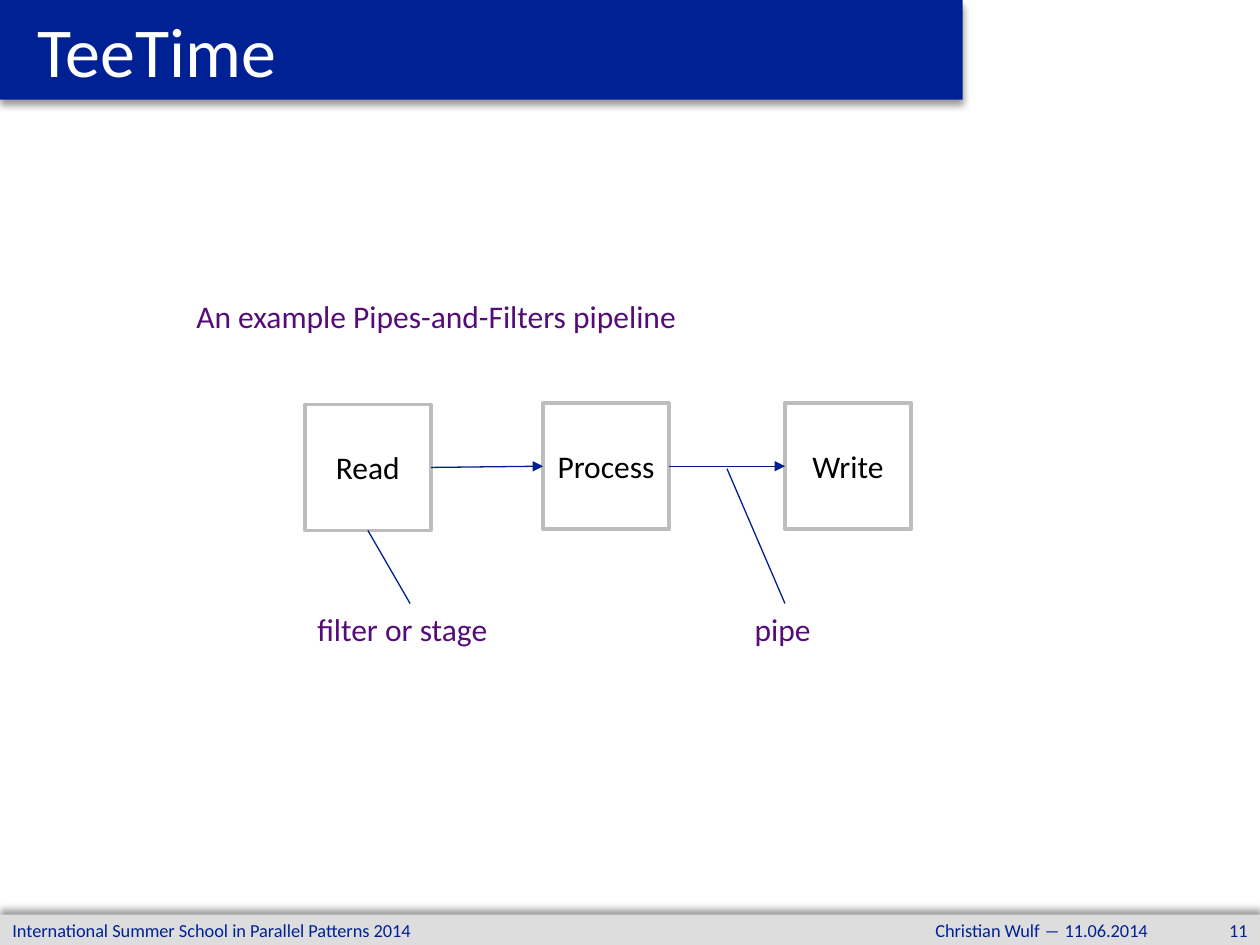
import dataclasses

import lxml.etree
import pptx
import pptx.dml.color
import pptx.enum.shapes
import pptx.enum.text
import pptx.oxml
import pptx.oxml.ns
import pptx.util

Inches = pptx.util.Inches
Pt = pptx.util.Pt
Align = pptx.enum.text.PP_ALIGN
Anchor = pptx.enum.text.MSO_ANCHOR
qn = pptx.oxml.ns.qn


@dataclasses.dataclass(frozen=True)
class Theme:
    font: str = "Calibri"
    title_size: float = 40
    body_size: float = 18
    footer_size: float = 10.5
    navy: str = "002193"
    arrow: str = "002090"
    purple: str = "550C78"
    footer_gray: str = "DDDDDD"
    border_gray: str = "BDBDBD"
    white: str = "FFFFFF"
    black: str = "000000"


THEME = Theme()


def rgb(value):
    return pptx.dml.color.RGBColor.from_string(value)


def write_text(shape, text, size, color, align=Align.LEFT,
               anchor=Anchor.MIDDLE, wrap=True, side_inset=0.1):
    frame = shape.text_frame
    frame.word_wrap = wrap
    frame.auto_size = pptx.enum.text.MSO_AUTO_SIZE.NONE
    frame.vertical_anchor = anchor
    frame.margin_left = frame.margin_right = Inches(side_inset)
    frame.margin_top = frame.margin_bottom = Inches(0.05)
    paragraph = frame.paragraphs[0]
    paragraph.alignment = align
    run = paragraph.add_run()
    run.text = text
    run.font.name = THEME.font
    run.font.size = Pt(size)
    run.font.color.rgb = rgb(color)


def add_rectangle(slide, left, top, width, height, fill):
    shape = slide.shapes.add_shape(
        pptx.enum.shapes.MSO_SHAPE.RECTANGLE,
        Inches(left), Inches(top), Inches(width), Inches(height))
    shape.shadow.inherit = False
    shape.fill.solid()
    shape.fill.fore_color.rgb = rgb(fill)
    shape.line.fill.background()
    return shape


def add_bar(slide, left, top, width, height, fill, shadow_angle):
    bar = add_rectangle(slide, left, top, width, height, fill)
    effects = bar.element.spPr.find(qn("a:effectLst"))
    shadow = lxml.etree.SubElement(
        effects, qn("a:outerShdw"), blurRad=str(Pt(4)), dist=str(Pt(3)),
        dir=str(shadow_angle * 60000), rotWithShape="0")
    color = lxml.etree.SubElement(shadow, qn("a:srgbClr"), val=THEME.black)
    lxml.etree.SubElement(color, qn("a:alpha"), val="40000")


def add_title(slide, text, width, height):
    title = slide.shapes.title
    title.left, title.top = Inches(0), Inches(0)
    title.width, title.height = Inches(width), Inches(height)
    write_text(title, text, THEME.title_size, THEME.white,
               wrap=False, side_inset=0.3)
    slide.shapes.element.append(title.element)


def add_stage(slide, text, left, top):
    stage = add_rectangle(slide, left, top, 1, 1, THEME.white)
    stage.line.color.rgb = rgb(THEME.border_gray)
    stage.line.width = Pt(2)
    write_text(stage, text, THEME.body_size, THEME.black, Align.CENTER)
    return stage


def add_text_box(slide, left, top, width, height):
    return slide.shapes.add_textbox(
        Inches(left), Inches(top), Inches(width), Inches(height))


def add_label(slide, text, left, top, width):
    label = add_text_box(slide, left, top, width, 0.4)
    write_text(label, text, THEME.body_size, THEME.purple, anchor=Anchor.TOP)
    return label


def add_footer(slide, text, left, width, align, wrap=False):
    footer = add_text_box(slide, left, 7.28, width, 0.2)
    write_text(footer, text, THEME.footer_size, THEME.navy, align, wrap=wrap)


def add_line(slide, start, start_site, end=None, end_site=None,
             end_point=(0, 0), arrow=False):
    x, y = end_point
    line = slide.shapes.add_connector(
        pptx.enum.shapes.MSO_CONNECTOR.STRAIGHT,
        Inches(0), Inches(0), Inches(x), Inches(y))
    line.begin_connect(start, start_site)
    if end is not None:
        line.end_connect(end, end_site)
    line.line.color.rgb = rgb(THEME.arrow)
    line.line.width = Pt(0.75)
    if arrow:
        lxml.etree.SubElement(
            line.line._get_or_add_ln(), qn("a:tailEnd"), type="triangle")
    lxml.etree.SubElement(line.element.spPr, qn("a:effectLst"))


def main():
    presentation = pptx.Presentation()
    presentation.slide_width = Inches(10)
    presentation.slide_height = Inches(7.5)
    slide = presentation.slides.add_slide(presentation.slide_layouts[5])

    add_bar(slide, 0, 0, 7.64, 0.79, THEME.navy, 90)
    add_bar(slide, 0, 7.26, 10, 0.24, THEME.footer_gray, 270)
    add_title(slide, "TeeTime", 7.64, 0.79)

    read = add_stage(slide, "Read", 2.42, 3.21)
    process = add_stage(slide, "Process", 4.31, 3.2)
    write = add_stage(slide, "Write", 6.23, 3.2)
    for source, target in ((read, process), (process, write)):
        add_line(slide, source, 3, target, 1, arrow=True)

    add_label(slide, "An example Pipes-and-Filters pipeline", 1.46, 2.31, 4.09)
    stage_label = add_label(slide, "filter or stage", 2.42, 4.79, 1.67)
    pipe_label = add_label(slide, "pipe", 5.89, 4.79, 0.68)
    add_line(slide, stage_label, 0, read, 2)
    add_line(slide, pipe_label, 0, end_point=(5.77, 3.72))

    add_footer(slide, "International Summer School in Parallel Patterns 2014",
               0, 7.24, Align.LEFT)
    add_footer(slide, "Christian Wulf ― 11.06.2014", 7.24, 1.97, Align.RIGHT)
    add_footer(slide, "11", 9.21, 0.79, Align.RIGHT, wrap=True)

    presentation.save("out.pptx")


if __name__ == "__main__":
    main()
